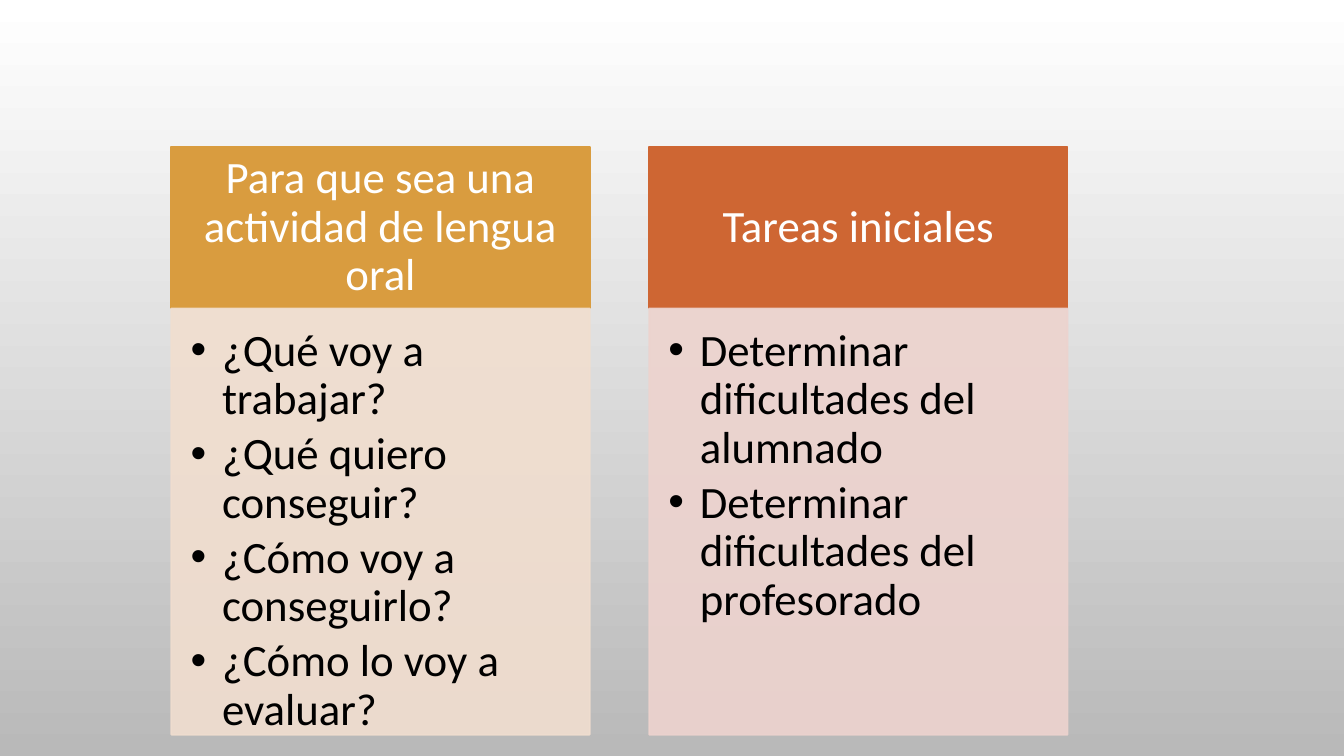
from lxml import etree
from pptx import Presentation
from pptx import util as u
from pptx.dml import color
from pptx.enum import shapes, text
from pptx.oxml import ns

Pt = u.Pt
LEFT, TOP, WIDTH, STEP = 122.4, 105.12, 298.8, 341.28
HEAD, BODY = 115.2, 304.56


def rgb(code):
    return color.RGBColor.from_string(code)


def apply(target, values):
    for name, value in values.items():
        setattr(target, name, value)


class Board:
    font = {"name": "Calibri", "size": Pt(32)}
    head = {
        "frame": {"vertical_anchor": text.MSO_ANCHOR.MIDDLE, "word_wrap": True,
                  "margin_left": Pt(18), "margin_right": Pt(18),
                  "margin_top": Pt(10), "margin_bottom": Pt(10)},
        "para": {"alignment": text.PP_ALIGN.CENTER, "line_spacing": 0.9},
        "ink": "FFFFFF",
    }
    body = {
        "frame": {"vertical_anchor": text.MSO_ANCHOR.TOP, "word_wrap": True,
                  "margin_left": Pt(13.68), "margin_right": Pt(18),
                  "margin_top": Pt(13.68), "margin_bottom": Pt(20)},
        "para": {"alignment": text.PP_ALIGN.LEFT, "line_spacing": 0.9,
                 "space_after": Pt(4.8)},
        "ink": "000000",
    }

    def __init__(self, slide):
        self.slide = slide

    def shade(self, start, end):
        fill = self.slide.background.fill
        fill.gradient()
        fill.gradient_angle = 270
        for stop, code in zip(fill.gradient_stops, (start, end)):
            stop.color.rgb = rgb(code)

    def alpha(self, fill, share):
        for tint in fill.iter(ns.qn("a:srgbClr")):
            etree.SubElement(tint, ns.qn("a:alpha"), val=str(share * 1000))

    def bullet(self, para):
        props = para._p.get_or_add_pPr()
        props.set("marL", str(Pt(22.5)))
        props.set("indent", str(-Pt(22.5)))
        etree.SubElement(props, ns.qn("a:buFont"), typeface="Arial")
        etree.SubElement(props, ns.qn("a:buChar"), char="•")

    def panel(self, box, code, lines, style, share=100, dots=False):
        shape = self.slide.shapes.add_shape(
            shapes.MSO_SHAPE.RECTANGLE, *map(Pt, box))
        shape.shadow.inherit = False
        shape.fill.solid()
        shape.fill.fore_color.rgb = rgb(code)
        shape.line.color.rgb = rgb(code)
        shape.line.width = Pt(1.25)
        if share < 100:
            self.alpha(shape._element.spPr, share)
        frame = shape.text_frame
        apply(frame, style["frame"])
        for index, line in enumerate(lines):
            para = frame.add_paragraph() if index else frame.paragraphs[0]
            if dots:
                self.bullet(para)
            apply(para, style["para"])
            run = para.add_run()
            run.text = line
            apply(run.font, self.font)
            run.font.color.rgb = rgb(style["ink"])

    def column(self, index, title, items, dark, light):
        left = LEFT + index * STEP
        self.panel((left, TOP, WIDTH, HEAD), dark, [title], self.head)
        self.panel((left, TOP + HEAD, WIDTH, BODY), light, items,
                   self.body, share=90, dots=True)


COLUMNS = [
    ("Para que sea una actividad de lengua oral",
     ["¿Qué voy a trabajar?", "¿Qué quiero conseguir?",
      "¿Cómo voy a conseguirlo?", "¿Cómo lo voy a evaluar?"],
     "D99C3F", "F1DECF"),
    ("Tareas iniciales",
     ["Determinar dificultades del alumnado",
      "Determinar dificultades del profesorado"],
     "CE6633", "EDD3CE"),
]


def main():
    deck = Presentation()
    apply(deck, {"slide_width": Pt(960), "slide_height": Pt(540)})
    board = Board(deck.slides.add_slide(deck.slide_layouts[6]))
    board.shade("FFFFFF", "B9B9B9")
    for index, column in enumerate(COLUMNS):
        board.column(index, *column)
    deck.save("out.pptx")


if __name__ == "__main__":
    main()
